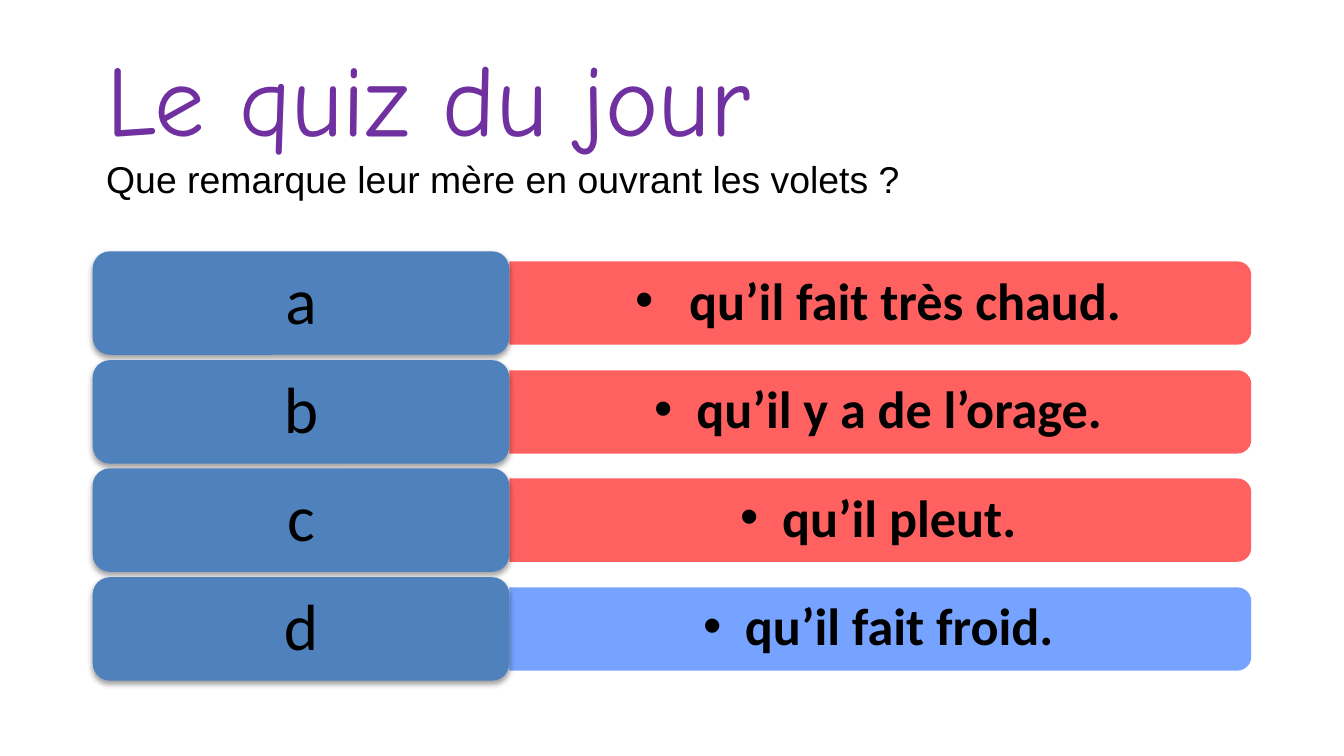
import pptx
import pptx.dml.color
import pptx.enum.shapes
import pptx.enum.text
import pptx.oxml
import pptx.oxml.ns
import pptx.util

RGB = pptx.dml.color.RGBColor
SHAPE = pptx.enum.shapes.MSO_SHAPE
PX = 4572  # 200 px to the inch

PURPLE = RGB(0x70, 0x30, 0xA0)
BLACK = RGB(0, 0, 0)
RED = RGB(0xFF, 0x50, 0x50)
LIGHT_BLUE = RGB(0x66, 0x99, 0xFF)
BLUE = RGB(0x4F, 0x81, 0xBD)

NS = pptx.oxml.ns.nsdecls("a")
ALPHA = f'<a:alpha {NS} val="90000"/>'
SHADOW = (f'<a:outerShdw {NS} blurRad="40000" dist="20000" dir="5400000" rotWithShape="0">'
          '<a:srgbClr val="000000"><a:alpha val="38000"/></a:srgbClr></a:outerShdw>')
BULLETS = (f'<a:buFont {NS} typeface="Arial"/>', f'<a:buChar {NS} char="•"/>')


def add_box(kind, box, color):
    sp = s.shapes.add_shape(kind, *[v * PX for v in box])
    sp.shadow.inherit = False
    sp.fill.solid()
    sp.fill.fore_color.rgb = color
    sp.line.fill.background()
    return sp


def add_label(box, text, insets, font):
    """Add a centred one-line text box and return its paragraph."""
    tf = s.shapes.add_textbox(*[v * PX for v in box]).text_frame
    frame = {"word_wrap": True, "vertical_anchor": pptx.enum.text.MSO_ANCHOR.MIDDLE,
             "margin_left": insets[0] * PX, "margin_right": insets[0] * PX,
             "margin_top": insets[1] * PX, "margin_bottom": insets[1] * PX}
    for name, value in frame.items():
        setattr(tf, name, value)
    p = tf.paragraphs[0]
    p.alignment = pptx.enum.text.PP_ALIGN.CENTER
    p.line_spacing = 0.9
    r = p.add_run()
    r.text = text
    r.font.color.rgb = BLACK
    for name, value in font.items():
        setattr(r.font, name, value)
    return p


prs = pptx.Presentation()
prs.slide_width, prs.slide_height = 2000 * PX, 1125 * PX
s = prs.slides.add_slide(prs.slide_layouts[5])

title = s.shapes.title
for name, value in {"left": 138, "top": 41, "width": 1724, "height": 270}.items():
    setattr(title, name, value * PX)
tf = title.text_frame
tf.auto_size = pptx.enum.text.MSO_AUTO_SIZE.NONE
tf.vertical_anchor = pptx.enum.text.MSO_ANCHOR.MIDDLE
p = tf.paragraphs[0]
p.alignment = pptx.enum.text.PP_ALIGN.LEFT
for i, (text, size, face, color) in enumerate([
        ("Le quiz du jour", 54, "Comic Neue", PURPLE),
        ("Que remarque leur mère en ouvrant les volets ?", 20, "Arial", BLACK)]):
    if i:
        p.add_line_break()
    r = p.add_run()
    r.text = text
    r.font.size, r.font.name = pptx.util.Pt(size), face
    r.font.color.rgb = color

LETTER_FONT = {"name": "Calibri", "size": pptx.util.Pt(35)}
ANSWER_FONT = {"name": "Calibri", "size": pptx.util.Pt(28), "bold": True}
LEFT, TOP, PITCH = 138, 374, 161.7
LETTER_W, LETTER_H = 620, 154
BAR_W, BAR_H = 1104, 124
BAR_LEFT = LEFT + LETTER_W
TURN = (BAR_W - BAR_H) // 2  # offset of the upright bar before its quarter turn

answers = [
    ("a", " qu’il fait très chaud.", RED),
    ("b", "qu’il y a de l’orage.", RED),
    ("c", "qu’il pleut.", RED),
    ("d", "qu’il fait froid.", LIGHT_BLUE),
]
for i, (letter, answer, color) in enumerate(answers):
    y = round(TOP + i * PITCH)
    bar_y = y + (LETTER_H - BAR_H) // 2

    bar = add_box(SHAPE.ROUND_2_SAME_RECTANGLE,
                  (BAR_LEFT + TURN, bar_y - TURN, BAR_H, BAR_W), color)
    bar.rotation = 90
    bar.fill._xPr.find(".//" + pptx.oxml.ns.qn("a:srgbClr")).append(pptx.oxml.parse_xml(ALPHA))

    p = add_label((BAR_LEFT, bar_y + 6, BAR_W - 6, BAR_H - 12), answer, (24, 12), ANSWER_FONT)
    p.level = 1
    pPr = p._p.get_or_add_pPr()
    pPr.set("marL", str(62 * PX))
    pPr.set("indent", str(-62 * PX))
    for xml in BULLETS:
        pPr.append(pptx.oxml.parse_xml(xml))

    tile = add_box(SHAPE.ROUNDED_RECTANGLE, (LEFT, y, LETTER_W, LETTER_H), BLUE)
    effects = tile._element.spPr.find(pptx.oxml.ns.qn("a:effectLst"))
    effects.append(pptx.oxml.parse_xml(SHADOW))
    add_label((LEFT + 8, y + 8, LETTER_W - 16, LETTER_H - 16), letter, (30, 14), LETTER_FONT)

prs.save("out.pptx")
